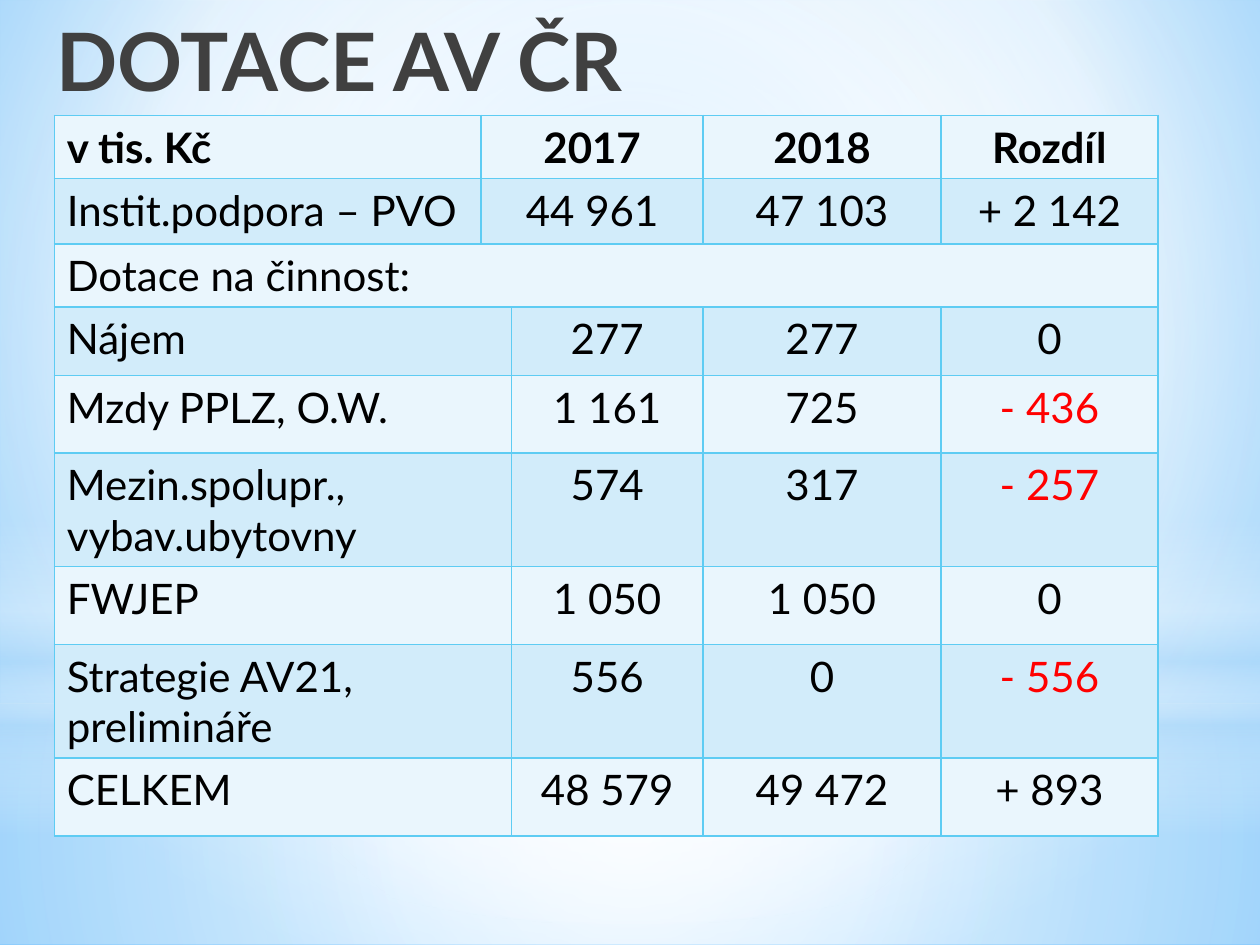
from lxml import etree
from pptx import Presentation
from pptx.dml.color import RGBColor
from pptx.enum.shapes import MSO_SHAPE
from pptx.enum.text import MSO_ANCHOR, PP_ALIGN
from pptx.oxml import parse_xml
from pptx.oxml.ns import nsdecls, qn
from pptx.util import Pt

RECT, OVAL = MSO_SHAPE.RECTANGLE, MSO_SHAPE.OVAL
LEFT, CENTER = PP_ALIGN.LEFT, PP_ALIGN.CENTER
TOP = MSO_ANCHOR.TOP

BLACK = RGBColor(0x00, 0x00, 0x00)
GRAY = RGBColor(0x40, 0x40, 0x40)
RED = RGBColor(0xFF, 0x00, 0x00)
WHITE = RGBColor(0xFF, 0xFF, 0xFF)
SKY = RGBColor(0x9E, 0xD5, 0xFF)
AZURE = RGBColor(0x5B, 0xB9, 0xFF)
HAZE = RGBColor(0xB4, 0xDC, 0xFA)
CYAN = RGBColor(0x5E, 0xCC, 0xF3)
PALE = RGBColor(0xEA, 0xF6, 0xFD)
TINT = RGBColor(0xD2, 0xEC, 0xFA)

MID = (50, 50, 50, 50)
COLS = [244, 11.5, 109.5, 136, 124]
ROWS = [34, 37.5, 32.5, 39] + [44.5] * 5
DATA = [
    ("v tis. Kč", "2017", "2018", "Rozdíl"),
    ("Instit.podpora – PVO", "44 961", "47 103", "+ 2 142"),
    ("Dotace na činnost:",),
    ("Nájem", "277", "277", "0"),
    ("Mzdy PPLZ, O.W.", "1 161", "725", "- 436"),
    ("Mezin.spolupr., vybav.ubytovny", "574", "317", "- 257"),
    ("FWJEP", "1 050", "1 050", "0"),
    ("Strategie AV21, prelimináře", "556", "0", "- 556"),
    ("CELKEM", "48 579", "49 472", "+ 893"),
]


def blend(stops, focus=None):
    """Gradient of (position, colour, opacity): round a focus, or downward."""
    marks = "".join(
        f'<a:gs pos="{pos * 1000}"><a:srgbClr val="{color}">'
        f'<a:alpha val="{alpha * 1000}"/></a:srgbClr></a:gs>'
        for pos, color, alpha in stops)
    way = '<a:lin ang="5400000" scaled="0"/>'
    if focus:
        sides = " ".join(f'{s}="{v * 1000}"' for s, v in zip("ltrb", focus))
        way = f'<a:path path="circle"><a:fillToRect {sides}/></a:path>'
    return parse_xml(f'<a:gradFill {nsdecls("a")} rotWithShape="1">'
                     f'<a:gsLst>{marks}</a:gsLst>{way}</a:gradFill>')


class Deck:
    font = "Lato"

    def __init__(self, width, height):
        self.prs = Presentation()
        self.prs.slide_width, self.prs.slide_height = Pt(width), Pt(height)
        self.slide = self.prs.slides.add_slide(self.prs.slide_layouts[6])

    def swap(self, owner, grad):
        """Put a gradient in place of a solid fill."""
        solid = owner.find(qn("a:solidFill"))
        owner.replace(solid, grad)

    def back(self, grad):
        self.slide.background.fill.solid()
        self.swap(self.slide.element.find(".//" + qn("p:bgPr")), grad)

    def glow(self, kind, top, height, grad):
        shape = self.slide.shapes.add_shape(
            kind, 0, Pt(top), self.prs.slide_width, Pt(height))
        shape.shadow.inherit = False
        shape.fill.solid()
        self.swap(shape.element.spPr, grad)
        shape.line.fill.background()

    def label(self, frame, text, size, color, bold=False, align=LEFT):
        par = frame.paragraphs[0]
        par.text, par.alignment = text, align
        font = par.font
        font.name, font.size, font.bold = self.font, Pt(size), bold
        font.color.rgb = color

    def title(self, text, left, top, width, height):
        box = self.slide.shapes.add_textbox(
            Pt(left), Pt(top), Pt(width), Pt(height))
        box.text_frame.word_wrap = True
        box.text_frame.vertical_anchor = TOP
        self.label(box.text_frame, text, 46, GRAY, bold=True)

    def edge(self, cell):
        props = cell._tc.get_or_add_tcPr()
        for side in ("lnL", "lnR", "lnT", "lnB"):
            line = etree.SubElement(props, qn("a:" + side), w=str(Pt(1)))
            fill = etree.SubElement(line, qn("a:solidFill"))
            etree.SubElement(fill, qn("a:srgbClr"), val=str(CYAN))

    def table(self, data, left, top, cols, rows):
        table = self.slide.shapes.add_table(
            len(rows), len(cols), Pt(left), Pt(top),
            Pt(sum(cols)), Pt(sum(rows))).table
        for col, width in zip(table.columns, cols):
            col.width = Pt(width)
        for r, (height, texts) in enumerate(zip(rows, data)):
            table.rows[r].height = Pt(height)
            for c in range(len(cols)):
                cell = table.cell(r, c)
                self.edge(cell)
                cell.fill.solid()
                cell.fill.fore_color.rgb = TINT if r % 2 else PALE
            # The narrow column joins the years on top, the labels below
            if len(texts) == 1:
                first, last, spots = 0, 4, [0]
            elif r < 2:
                first, last, spots = 1, 2, [0, 1, 3, 4]
            else:
                first, last, spots = 0, 1, [0, 2, 3, 4]
            table.cell(r, first).merge(table.cell(r, last))
            for c, text in zip(spots, texts):
                self.label(table.cell(r, c).text_frame, text, 24,
                           RED if text.startswith("-") else BLACK,
                           bold=r == 0, align=CENTER if c else LEFT)


def main():
    deck = Deck(720, 540)

    # Background and soft light
    deck.back(blend([(0, SKY, 100), (60, WHITE, 100), (100, AZURE, 100)],
                    (20, 10, 20, 60)))
    deck.glow(RECT, 402, 138, blend(
        [(0, WHITE, 91), (37, WHITE, 76), (100, HAZE, 79)], MID))
    deck.glow(RECT, 0, 402, blend(
        [(0, WHITE, 89), (48, WHITE, 62), (100, HAZE, 79)], MID))
    deck.glow(RECT, 297, 180, blend(
        [(0, WHITE, 0), (29, WHITE, 30), (45, HAZE, 40),
         (55, WHITE, 26), (65, HAZE, 60), (100, WHITE, 0)]))
    deck.glow(OVAL, 126, 402, blend([(0, WHITE, 100), (56, WHITE, 0)], MID))

    # Title and grants table
    deck.title("DOTACE AV ČR", 25, 3, 695, 90)
    deck.table(DATA, 31, 66, COLS, ROWS)

    deck.prs.save("out.pptx")


if __name__ == "__main__":
    main()
